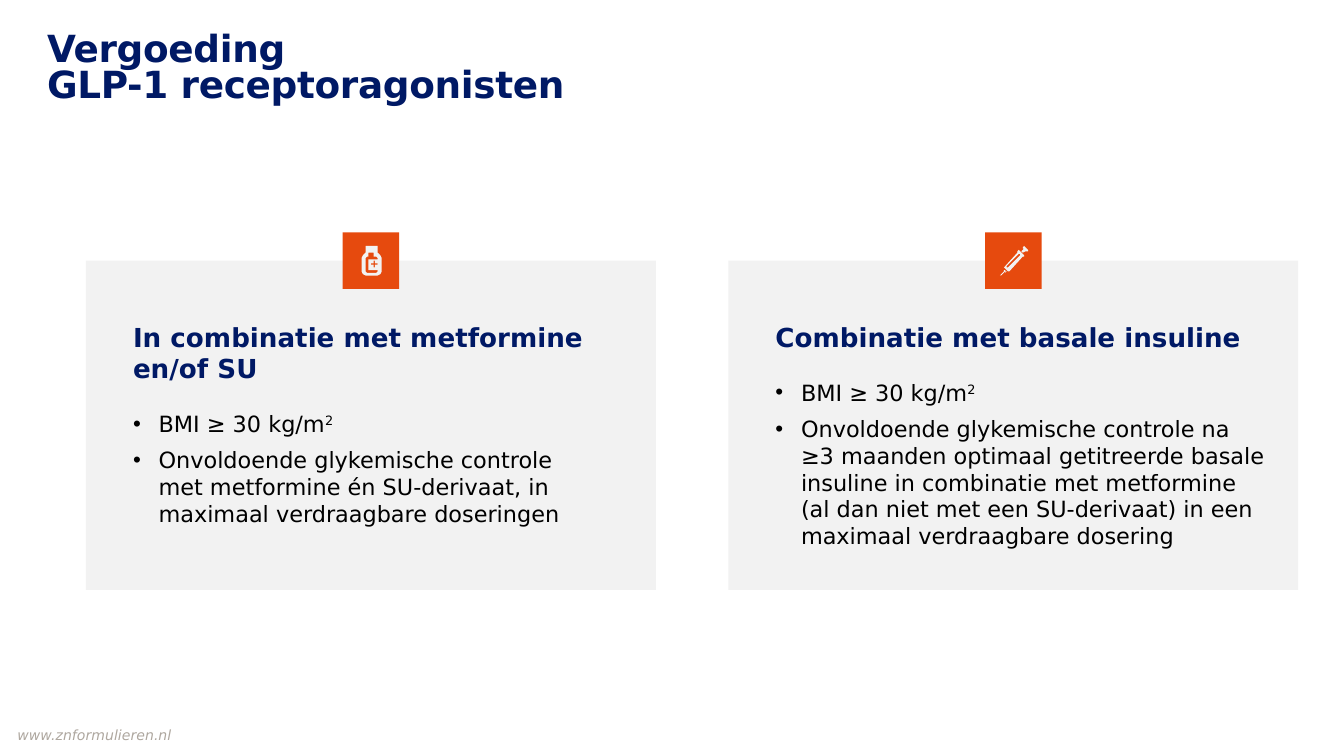
import copy

import lxml.etree
import pptx
import pptx.dml.color
import pptx.enum.shapes
import pptx.enum.text
import pptx.oxml.ns
import pptx.util

Inches = pptx.util.Inches
Pt = pptx.util.Pt
qn = pptx.oxml.ns.qn

NAVY, ORANGE, GREY = "001965", "E64A0E", "F2F2F2"
FONT = "DejaVu Sans"
TITLE = {"name": FONT, "size": Pt(20), "bold": True, "color": NAVY}
HEADING = {"name": FONT, "size": Pt(14), "bold": True, "color": NAVY}
BODY = {"name": FONT, "size": Pt(12), "bold": False, "color": "000000"}
FOOTER = {"name": FONT, "size": Pt(7.5), "italic": True, "color": "AEA79F"}

# Icon outlines in hundredths of an inch from the corner of the tile
BOTTLE = [[
    [(26, 15), (26, 10), (17, 10), (17, 15), (15, 17), (14, 19), (14, 29),
     (15, 31), (17, 32), (26, 32), (28, 31), (29, 29), (29, 19), (28, 17)],
    [(25, 30), (18, 30), (17, 29), (17, 19), (18, 18), (19, 18), (19, 15),
     (23, 15), (23, 18), (25, 18), (26, 19), (26, 20), (19, 20), (19, 28),
     (26, 28), (26, 29)],
    [(21, 24), (21, 23), (23, 23), (23, 21), (24, 21), (24, 23), (26, 23),
     (26, 24), (24, 24), (24, 26), (23, 26), (23, 24)],
]]
BARREL = [
    [(29, 18), (29, 17), (26, 14), (25, 13), (24, 14), (24, 15), (15, 25),
     (14, 26), (16, 28), (17, 29), (18, 29), (28, 18)],
    [(17, 26), (16, 26), (16, 25), (25, 16), (26, 16), (26, 17)],
]
PLUNGER = [[(28, 12), (29, 12), (27, 14), (28, 15), (30, 14), (31, 14),
            (32, 14), (32, 13), (30, 11), (29, 10), (28, 11)]]
NEEDLE = [[(15, 29), (15, 28), (14, 28), (14, 29), (11, 32), (12, 32),
           (15, 29), (15, 30), (16, 29)]]
SYRINGE = [BARREL, PLUNGER, NEEDLE]

CARDS = [
    (0.64, BOTTLE, "In combinatie met metformine en/of SU",
     "Onvoldoende glykemische controle\vmet metformine én SU-derivaat, "
     "in maximaal verdraagbare doseringen"),
    (5.42, SYRINGE, "Combinatie met basale insuline",
     "Onvoldoende glykemische controle na\v≥3 maanden optimaal getitreerde "
     "basale insuline in combinatie met metformine (al dan niet met een "
     "SU-derivaat) in een maximaal verdraagbare dosering"),
]


def paint(shape, color):
    shape.shadow.inherit = False
    shape.fill.solid()
    shape.fill.fore_color.rgb = pptx.dml.color.RGBColor.from_string(color)
    shape.line.fill.background()


def write(paragraph, text, style, **run_attributes):
    """Add text in one style; \\v is a line break that takes the same style."""
    for number, line in enumerate(text.split("\v")):
        if number:
            paragraph.add_line_break()
        run = paragraph.add_run()
        run.text = line
        for key, value in style.items():
            if key == "color":
                run.font.color.rgb = pptx.dml.color.RGBColor.from_string(value)
            else:
                setattr(run.font, key, value)
        properties = run._r.get_or_add_rPr()
        for key, value in run_attributes.items():
            properties.set(key, value)
        if number:
            run._r.getprevious().append(copy.deepcopy(properties))


presentation = pptx.Presentation()
presentation.slide_width = Inches(10)
presentation.slide_height = Inches(10) * 9 // 16
slide = presentation.slides.add_slide(presentation.slide_layouts[6])

NO_MARGINS = {"word_wrap": True, "margin_left": 0, "margin_top": 0,
              "margin_right": 0, "margin_bottom": 0}
CARD_FRAME = {"word_wrap": True,
              "vertical_anchor": pptx.enum.text.MSO_ANCHOR.TOP,
              "margin_left": Inches(0.35), "margin_top": Inches(0.45),
              "margin_right": Inches(0.2), "margin_bottom": Inches(0.12)}

# Title and source line
for box, text, style, spacing, attributes in [
    ((0.35, 0.25, 8.72, 0.71), "Vergoeding\vGLP-1 receptoragonisten",
     TITLE, 0.8, {"spc": "-20"}),
    ((0.13, 5.42, 8.7, 0.15), "www.znformulieren.nl", FOOTER, 0.9, {}),
]:
    frame = slide.shapes.add_textbox(*map(Inches, box)).text_frame
    for key, value in NO_MARGINS.items():
        setattr(frame, key, value)
    frame.paragraphs[0].line_spacing = spacing
    write(frame.paragraphs[0], text, style, **attributes)

# Cards, each with an icon tile centred on its top edge
CARD_TOP, CARD_WIDTH, CARD_HEIGHT, TILE = 1.94, 4.24, 2.45, 0.42
RECTANGLE = pptx.enum.shapes.MSO_SHAPE.RECTANGLE

for left, icon, heading, condition in CARDS:
    card = slide.shapes.add_shape(
        RECTANGLE, Inches(left), Inches(CARD_TOP),
        Inches(CARD_WIDTH), Inches(CARD_HEIGHT))
    paint(card, GREY)
    frame = card.text_frame
    for key, value in CARD_FRAME.items():
        setattr(frame, key, value)

    title = frame.paragraphs[0]
    bmi, control = frame.add_paragraph(), frame.add_paragraph()
    for paragraph in (title, bmi, control):
        paragraph.alignment = pptx.enum.text.PP_ALIGN.LEFT
    for bullet, gap in ((bmi, 14), (control, 5)):
        bullet.space_before = Pt(gap)
        properties = bullet._p.get_or_add_pPr()
        properties.set("marL", str(Inches(0.19)))
        properties.set("indent", str(-Inches(0.19)))
        lxml.etree.SubElement(properties, qn("a:buFont"), typeface="Arial")
        lxml.etree.SubElement(properties, qn("a:buChar"), char="•")
    write(title, heading, HEADING)
    write(bmi, "BMI ≥ 30 kg/m", BODY)
    write(bmi, "2", BODY, baseline="30000")
    write(control, condition, BODY)

    tile_left = Inches(left + (CARD_WIDTH - TILE) / 2)
    tile_top = Inches(CARD_TOP - TILE / 2)
    badge = slide.shapes.add_group_shape()
    tile = badge.shapes.add_shape(
        RECTANGLE, tile_left, tile_top, Inches(TILE), Inches(TILE))
    paint(tile, ORANGE)
    for part in icon:
        outline = badge.shapes.build_freeform(*part[0][0], scale=Inches(0.01))
        outline.add_line_segments(part[0][1:])
        for hole in part[1:]:
            outline.move_to(*hole[0])
            outline.add_line_segments(hole[1:])
        paint(outline.convert_to_shape(tile_left, tile_top), GREY)

presentation.save("out.pptx")
